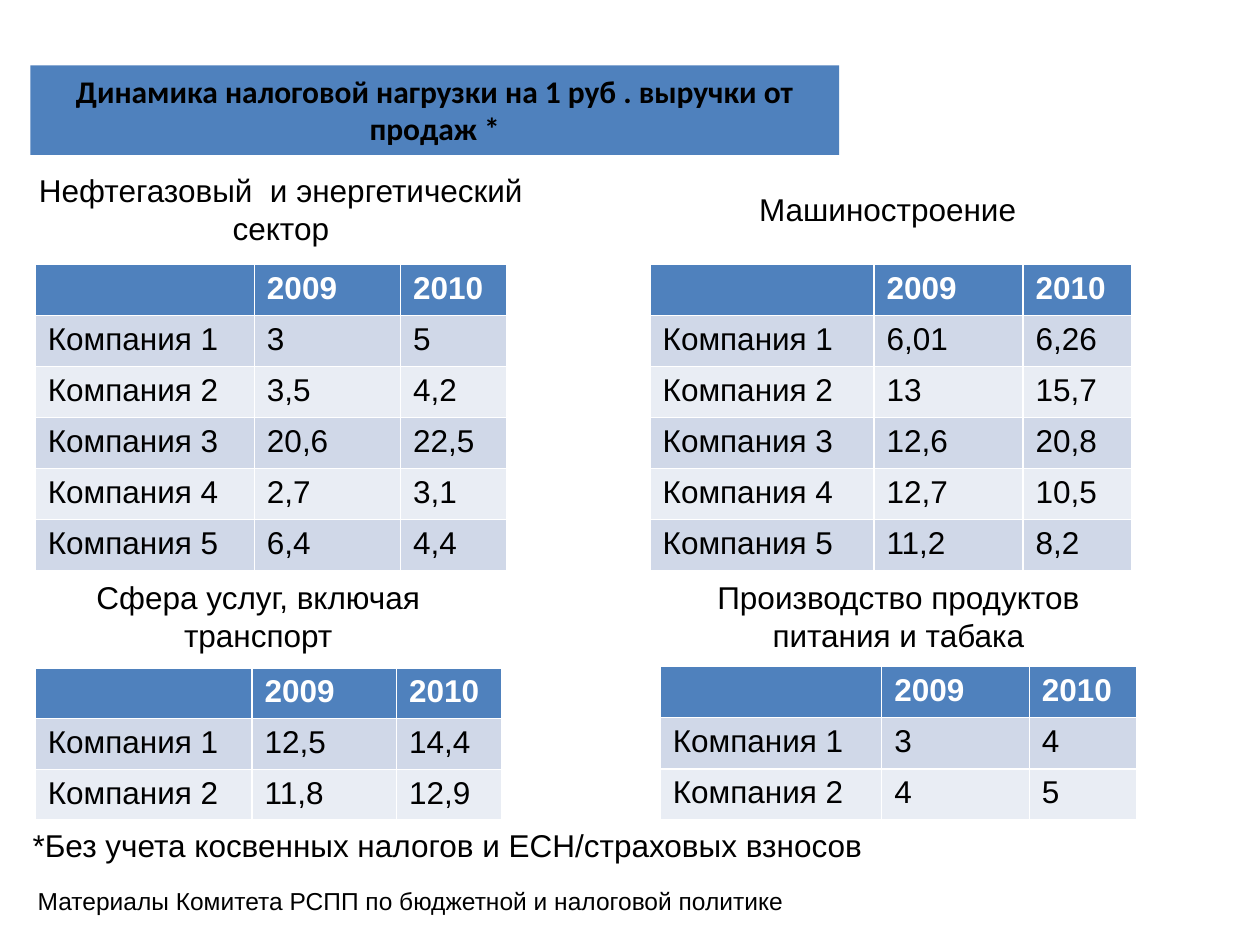
"""Build the slide on the tax burden per rouble of sales revenue."""
from pptx import Presentation
from pptx.dml.color import RGBColor as RGB
from pptx.enum.shapes import MSO_SHAPE as SHAPE
from pptx.enum.text import MSO_ANCHOR as ANCHOR, PP_ALIGN as ALIGN
from pptx.util import Inches, Pt

THEME = {
    "blue": "4F81BD", "bands": ("D0D8E8", "E9EDF4"),
    "black": "000000", "white": "FFFFFF",
    "font": "Arial", "title_font": "Calibri", "body": 18, "source": 14,
}
SLIDE = (Inches(10), Inches(7.5))
YEARS = ("2009", "2010")
COLUMN_SHARES = (0.465, 0.31, 0.225)

TITLE = ("Динамика налоговой нагрузки на 1 руб . выручки от продаж *", (2.4, 6.93, 64.2, 9.47))
FOOTNOTE = ("*Без учета косвенных налогов и ЕСН/страховых взносов", (1.6, 86.8, 79.9, 5.33))
SOURCE = ("Материалы Комитета РСПП по бюджетной и налоговой политике", (2, 93.07, 83.5, 4.53))
SECTORS = [
    {"name": "Нефтегазовый  и энергетический сектор",
     "name_box": (2, 17.47, 40.6, 9.47), "table_box": (2.8, 28, 37.4, 32.4),
     "values": [("3", "5"), ("3,5", "4,2"), ("20,6", "22,5"), ("2,7", "3,1"), ("6,4", "4,4")]},
    {"name": "Машиностроение",
     "name_box": (53.9, 19.47, 33.1, 5.33), "table_box": (51.6, 28, 38.2, 32.4),
     "values": [("6,01", "6,26"), ("13", "15,7"), ("12,6", "20,8"), ("12,7", "10,5"), ("11,2", "8,2")]},
    {"name": "Сфера услуг, включая транспорт",
     "name_box": (2, 60.53, 37, 9.47), "table_box": (2.8, 70.67, 37, 16.13),
     "values": [("12,5", "14,4"), ("11,8", "12,9")]},
    {"name": "Производство продуктов питания и табака",
     "name_box": (52.4, 60.53, 37.8, 9.47), "table_box": (52.4, 70.53, 37.8, 16.27),
     "values": [("3", "4"), ("4", "5")]},
]


def place(box):
    return [int(SLIDE[i % 2] * share / 100) for i, share in enumerate(box)]


def write(tf, text, size=THEME["body"], font=THEME["font"], color=THEME["black"],
          bold=False, align=ALIGN.LEFT):
    p = tf.paragraphs[0]
    p.alignment = align
    r = p.add_run()
    r.text = text
    r.font.size, r.font.name, r.font.bold = Pt(size), font, bold
    r.font.color.rgb = RGB.from_string(color)


def paint(sp, color):
    sp.fill.solid()
    sp.fill.fore_color.rgb = RGB.from_string(color)


def add_text(s, text, box, **style):
    tf = s.shapes.add_textbox(*place(box)).text_frame
    tf.word_wrap = True
    write(tf, text, **style)


def add_title(s, text, box):
    sp = s.shapes.add_shape(SHAPE.RECTANGLE, *place(box))
    sp.shadow.inherit = False
    paint(sp, THEME["blue"])
    sp.line.fill.background()
    sp.text_frame.word_wrap = True
    sp.text_frame.vertical_anchor = ANCHOR.TOP
    write(sp.text_frame, text, font=THEME["title_font"], bold=True, align=ALIGN.CENTER)


def add_sector_table(s, values, box):
    rows = [("", *YEARS)]
    rows += [(f"Компания {n}", *pair) for n, pair in enumerate(values, 1)]
    x, y, w, h = place(box)
    table = s.shapes.add_table(len(rows), len(rows[0]), x, y, w, h).table
    for column, share in zip(table.columns, COLUMN_SHARES):
        column.width = int(w * share)
    for i, row in enumerate(rows):
        header = i == 0
        for j, text in enumerate(row):
            cell = table.cell(i, j)
            paint(cell, THEME["blue"] if header else THEME["bands"][(i - 1) % 2])
            write(cell.text_frame, text, bold=header,
                  color=THEME["white" if header else "black"])


def main():
    prs = Presentation()
    prs.slide_width, prs.slide_height = SLIDE
    s = prs.slides.add_slide(prs.slide_layouts[6])
    for sector in SECTORS:
        add_text(s, sector["name"], sector["name_box"], align=ALIGN.CENTER)
        add_sector_table(s, sector["values"], sector["table_box"])
    add_title(s, *TITLE)
    add_text(s, *FOOTNOTE)
    add_text(s, *SOURCE, size=THEME["source"])
    prs.save("out.pptx")


if __name__ == "__main__":
    main()
